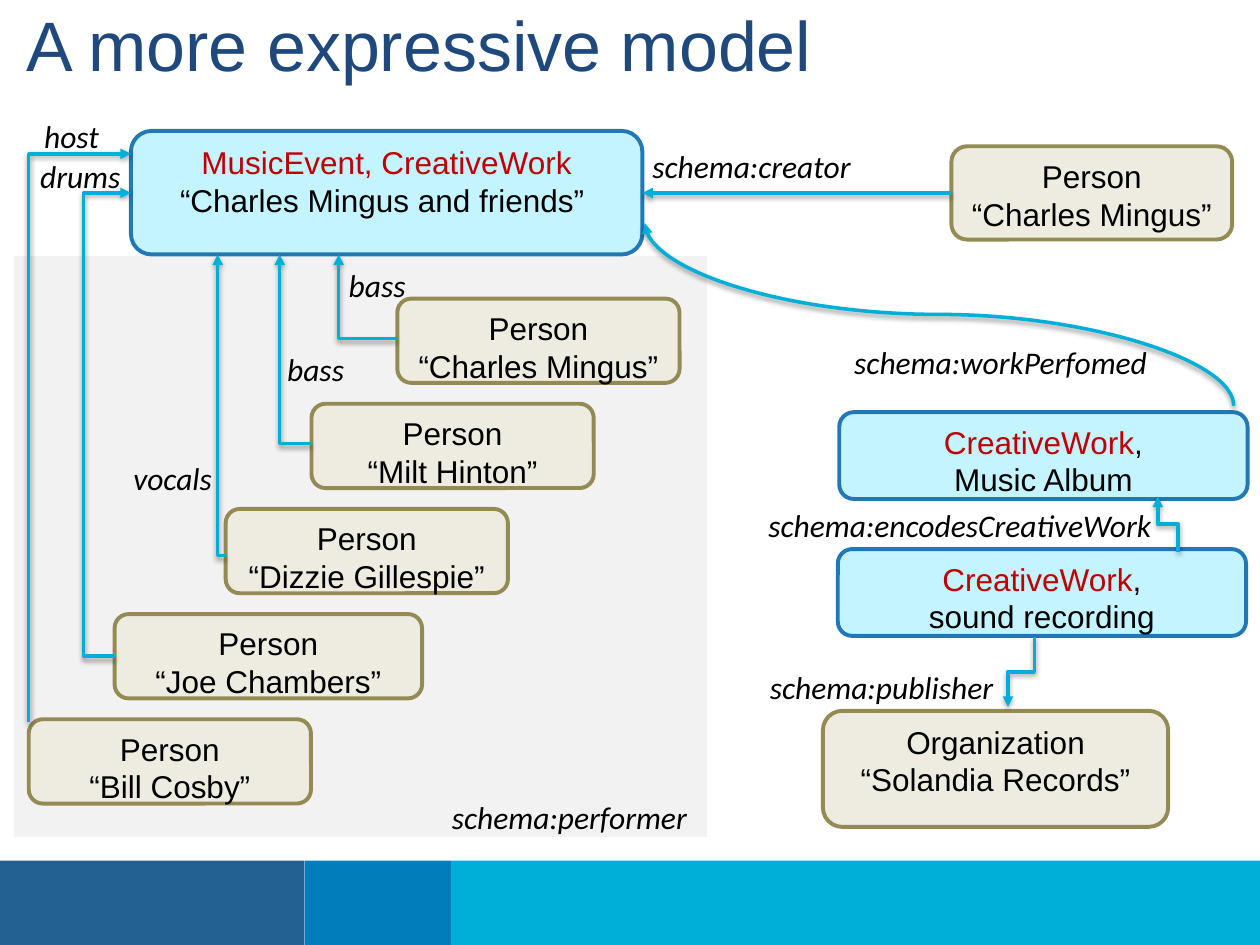
from dataclasses import dataclass
from typing import NamedTuple

from lxml.etree import SubElement
from pptx import Presentation
from pptx.dml.color import RGBColor
from pptx.enum.shapes import MSO_CONNECTOR, MSO_SHAPE
from pptx.enum.text import MSO_ANCHOR, PP_ALIGN
from pptx.oxml import parse_xml
from pptx.oxml.ns import nsdecls, qn
from pptx.util import Cm, Pt


@dataclass(frozen=True)
class Theme:
    sans: str = "Arial"
    script: str = "Calibri"
    head: int = 40
    body: int = 18
    edge: float = 2.25
    wire: float = 2
    title: str = "1F497D"
    black: str = "000000"
    red: str = "C00000"
    panel: str = "F2F2F2"
    cyan: str = "00AFD7"
    bands: tuple = (("236192", 6.14), ("007DBA", 2.95), ("00AFD7", 16.31))


class Skin(NamedTuple):
    fill: str
    edge: str
    name: str


class Box(NamedTuple):
    left: float
    top: float
    width: float
    height: float


class Card(NamedTuple):
    box: Box
    skin: Skin
    kind: str
    name: str
    form: MSO_SHAPE = MSO_SHAPE.ROUNDED_RECTANGLE


class Label(NamedTuple):
    text: str
    left: float
    top: float
    width: float = 5.38
    height: float = 0.79


class Link(NamedTuple):
    start: tuple[float, float]
    end: tuple[float, float]
    form: str = "bentConnector3"
    steep: bool = False
    bend: int | None = None


THEME = Theme()
AGENT = Skin("EEECE1", "948A54", THEME.black)
WORK = Skin("C4F4FF", "2178B5", THEME.red)
CORNER = "bentConnector2"

CARDS = [
    Card(Box(2.64, 2.64, 10.31, 2.49), WORK, "MusicEvent, CreativeWork",
         "“Charles Mingus and friends” ", MSO_SHAPE.FLOWCHART_ALTERNATE_PROCESS),
    Card(Box(19.18, 2.95, 5.66, 1.88), AGENT, "Person", "“Charles Mingus”"),
    Card(Box(16.92, 8.31, 8.23, 1.75), WORK, "CreativeWork,", "Music Album"),
    Card(Box(16.89, 11.07, 8.23, 1.75), WORK, "CreativeWork,", "sound recording"),
    Card(Box(16.59, 14.33, 6.96, 2.34), AGENT, "Organization", "“Solandia Records”"),
]
PLAYERS = [("Bill Cosby", 5.69), ("Joe Chambers", 6.2), ("Dizzie Gillespie", 5.69),
           ("Milt Hinton", 5.69), ("Charles Mingus", 5.69)]

LINKS = [
    Link((20.85, 12.85), (20.32, 14.25), steep=True),
    Link((8, 6.83), (6.83, 5.13), CORNER),
    Link((6.27, 8.94), (5.64, 5.13), CORNER),
    Link((4.55, 11.2), (4.39, 5.13), CORNER),
    Link((2.31, 13.23), (2.64, 3.89), bend=-189600),
    Link((0.58, 14.55), (2.64, 3.1), CORNER, steep=True),
    Link((24.87, 8.18), (13, 4.5), "curvedConnector3", steep=True),
    Link((23.75, 11.13), (23.34, 10.01), steep=True),
    Link((19.18, 3.89), (12.95, 3.89), "straightConnector1"),
]

LABELS = [
    Label("schema:publisher", 15.27, 13.23, 6.38),
    Label("schema:workPerfomed", 16.97, 6.68, 8.59, 1.09),
    Label("schema:creator", 12.9, 2.72, 4.67, 1.14),
    Label("schema:performer", 8.86, 15.85),
    Label("drums", 0.56, 2.92),
    Label("host", 0.64, 2.13),
    Label("vocals", 2.44, 9.02, 2.39),
    Label("bass", 5.54, 6.81),
    Label("bass", 6.78, 5.13),
    Label("schema:encodesCreativeWork", 15.24, 9.96, 8.59, 1.09),
]


def tint(code: str) -> RGBColor:
    return RGBColor.from_string(code)


def style(para, face: str, size: int, color: str, slant: bool = False) -> None:
    font = para.font
    font.name, font.size, font.italic = face, Pt(size), slant
    font.color.rgb = tint(color)


def add_box(slide, box: Box, fill: str, form=MSO_SHAPE.RECTANGLE):
    shape = slide.shapes.add_shape(form, *map(Cm, box))
    shape.shadow.inherit = False
    shape.fill.solid()
    shape.fill.fore_color.rgb = tint(fill)
    shape.line.fill.background()
    return shape


def add_card(slide, card: Card) -> None:
    shape = add_box(slide, card.box, card.skin.fill, card.form)
    shape.line.color.rgb = tint(card.skin.edge)
    shape.line.width = Pt(THEME.edge)
    frame = shape.text_frame
    frame.word_wrap = True
    frame.vertical_anchor = MSO_ANCHOR.TOP
    lines = frame.paragraphs[0], frame.add_paragraph()
    for para in lines:
        para.alignment = PP_ALIGN.CENTER
        style(para, THEME.sans, THEME.body, THEME.black)
    kind = card.kind.rstrip(",")
    run = lines[0].add_run()
    run.text = kind
    run.font.color.rgb = tint(card.skin.name)
    if kind != card.kind:
        lines[0].add_run().text = ","
    lines[1].add_run().text = card.name


def add_text(slide, text: str, box: Box, space: float):
    frame = slide.shapes.add_textbox(*map(Cm, box)).text_frame
    frame.word_wrap = True
    para = frame.paragraphs[0]
    para.add_run().text = text
    para.line_spacing = space
    return para


def add_link(slide, link: Link) -> None:
    (x1, y1), (x2, y2) = link.start, link.end
    turn = 0
    if link.steep:
        turn = 90 if y2 > y1 else 270
        midx, midy = (x1 + x2) / 2, (y1 + y2) / 2
        long = abs(y2 - y1) / 2
        side = (x1 - x2 if turn == 90 else x2 - x1) / 2
        x1, y1, x2, y2 = midx - long, midy - side, midx + long, midy + side
    wire = slide.shapes.add_connector(MSO_CONNECTOR.ELBOW, *map(Cm, (x1, y1, x2, y2)))
    wire.line.color.rgb = tint(THEME.cyan)
    wire.line.width = Pt(THEME.wire)
    props = wire._element.spPr
    if turn:
        props.find(qn("a:xfrm")).set("rot", str(turn * 60000))
    shape = props.find(qn("a:prstGeom"))
    shape.set("prst", link.form)
    if link.bend is not None:
        SubElement(shape.find(qn("a:avLst")), qn("a:gd"), name="adj1", fmla=f"val {link.bend}")
    SubElement(props.find(qn("a:ln")), qn("a:tailEnd"), type="triangle")
    props.append(parse_xml(
        f'<a:effectLst {nsdecls("a")}><a:outerShdw blurRad="{Pt(3.1)}" dist="{Pt(1.6)}" '
        f'dir="5400000" rotWithShape="0"><a:srgbClr val="{THEME.black}">'
        '<a:alpha val="38000"/></a:srgbClr></a:outerShdw></a:effectLst>'))


def main() -> None:
    deck = Presentation()
    deck.slide_width, deck.slide_height = Cm(25.4), Cm(19.05)
    slide = deck.slides.add_slide(deck.slide_layouts[6])

    left = 0
    for color, width in THEME.bands:
        add_box(slide, Box(left, 17.35, width, 1.7), color)
        left += width
    add_box(slide, Box(0.28, 5.16, 13.97, 11.71), THEME.panel)

    title = add_text(slide, "A more expressive model", Box(0.28, 0.1, 28.17, 2.92), 0.9)
    style(title, THEME.sans, THEME.head, THEME.title)

    for card in CARDS:
        add_card(slide, card)
    left = 0.58
    for step, (name, width) in enumerate(PLAYERS):
        box = Box(left, 14.5 - 2.12 * step, width, 1.7)
        add_card(slide, Card(box, AGENT, "Person", f"“{name}”"))
        left += width - 3.96
    for link in LINKS:
        add_link(slide, link)
    for label in LABELS:
        para = add_text(slide, label.text, Box(*label[1:]), 1.15)
        para.space_after = Pt(10)
        style(para, THEME.script, THEME.body, THEME.black, True)

    deck.save("out.pptx")


if __name__ == "__main__":
    main()
